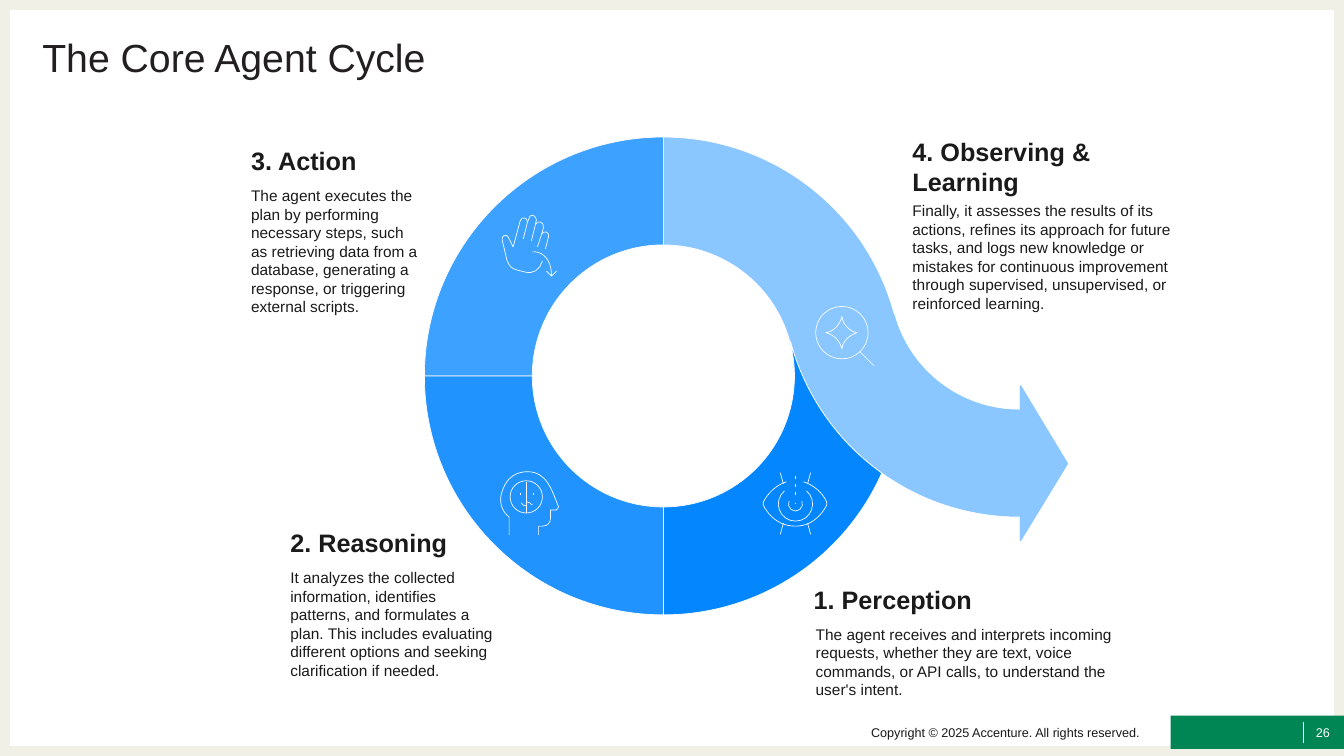
from dataclasses import dataclass
from math import ceil, cos, radians, sin, tan

from lxml import etree
from pptx import Presentation
from pptx import util as u
from pptx.dml.color import RGBColor
from pptx.enum import shapes, text
from pptx.oxml import ns

Point = tuple[float, float]
Stroke = list[list[Point]]  # one point: a line end; three points: a cubic curve

INK, WHITE = "1A1A1A", "FFFFFF"
HUB = (6.58, 3.73)      # centre of the ring
BEND = (10.11, 2.78)    # centre of the arrow's outward bend
OUT, IN = 2.37, 1.3     # ring radii
FAR, NEAR = 2.35, 1.28  # bend radii
TURN = 15               # angle at which the ring passes into the bend


@dataclass
class Step:
    head: str
    body: str
    x: float
    top: float
    shift: float
    low: float
    width: float
    high: float


@dataclass
class Band:
    fill: str
    edge: Stroke


STEPS = [
    Step("1. Perception",
         "The agent receives and interprets incoming requests, whether they are text, "
         "voice commands, or API calls, to understand the user's intent.",
         8.07, 5.8, 0.02, 6.2, 3.06, 0.74),
    Step("2. Reasoning",
         "It analyzes the collected information, identifies patterns, and formulates a plan. "
         "This includes evaluating different options and seeking clarification if needed.",
         2.88, 5.23, 0, 5.64, 2.04, 1.3),
    Step("3. Action",
         "The agent executes the plan by performing necessary steps, such as retrieving data "
         "from a database, generating a response, or triggering external scripts.",
         2.49, 1.44, 0, 1.85, 1.71, 1.3),
    Step("4. Observing &\nLearning",
         "Finally, it assesses the results of its actions, refines its approach for future "
         "tasks, and logs new knowledge or mistakes for continuous improvement through "
         "supervised, unsupervised, or reinforced learning.",
         9.05, 1.35, 0, 2.0, 2.83, 1.11),
]


# Geometry
def arc(hub: Point, r: float, start: float, end: float) -> Stroke:
    """Circle part in curves of 90 degrees at most, clockwise from the right."""
    count = ceil(abs(end - start) / 90)
    turn = radians(end - start) / count
    pull = r * 4 / 3 * tan(turn / 4)

    def at(i: int, lean: float = 0) -> Point:
        t = radians(start) + turn * i
        return (hub[0] + r * cos(t) - lean * sin(t), hub[1] + r * sin(t) + lean * cos(t))

    return [[at(0)]] + [[at(i, pull), at(i + 1, -pull), at(i + 1)] for i in range(count)]


def trace(plan: str) -> list[Stroke]:
    """Strokes split by '|'; C starts a cubic curve, other pairs are line ends."""
    strokes = []
    for part in plan.split("|"):
        marks = iter(part.split())
        stroke: Stroke = []
        for mark in marks:
            if mark == "C":
                stroke.append([(float(next(marks)), float(next(marks))) for _ in range(3)])
            else:
                stroke.append([(float(mark), float(next(marks)))])
        strokes.append(stroke)
    return strokes


# Drawing helpers
def tint(code: str) -> RGBColor:
    return RGBColor.from_string(code)


def bend(shape, strokes: list[Stroke]) -> None:
    """Join each three line ends that belong to a curve."""
    ends = iter(list(shape.element.iter(ns.qn("a:lnTo"))))
    for stroke in strokes:
        for part in stroke[1:]:
            first, *rest = [next(ends) for _ in part]
            if rest:
                first.tag = ns.qn("a:cubicBezTo")
            for node in rest:
                first.append(node[0])
                node.getparent().remove(node)


def draw(slide, strokes: list[Stroke], fill: str | None = None) -> None:
    pen = None
    for stroke in strokes:
        pts = [(u.Inches(x), u.Inches(y)) for part in stroke for x, y in part]
        if pen is None:
            pen = slide.shapes.build_freeform(*pts[0], scale=1.0)
        else:
            pen.move_to(*pts[0])
        pen.add_line_segments(pts[1:], close=fill is not None)
    shape = pen.convert_to_shape()
    bend(shape, strokes)
    shape.shadow.inherit = False
    if fill:
        shape.fill.solid()
        shape.fill.fore_color.rgb = tint(fill)
    else:
        shape.fill.background()
    shape.line.color.rgb = tint(WHITE)
    shape.line.width = u.Pt(0.48)


def block(slide, x: float, y: float, w: float, h: float, fill: str) -> None:
    shape = slide.shapes.add_shape(shapes.MSO_SHAPE.RECTANGLE, *map(u.Inches, (x, y, w, h)))
    shape.shadow.inherit = False
    shape.fill.solid()
    shape.fill.fore_color.rgb = tint(fill)
    shape.line.fill.background()


def write(box, words: str, *, size: float, color: str = INK, bold: bool = False,
          wrap: bool = True, mid: bool = False, align=text.PP_ALIGN.LEFT,
          space: float | None = None) -> None:
    frame = box.text_frame
    frame.margin_left = frame.margin_right = frame.margin_top = frame.margin_bottom = 0
    frame.auto_size = text.MSO_AUTO_SIZE.NONE
    frame.word_wrap = wrap
    frame.vertical_anchor = text.MSO_ANCHOR.MIDDLE if mid else text.MSO_ANCHOR.TOP
    para = frame.paragraphs[0]
    para.text = words
    para.alignment = align
    if space:
        para.line_spacing = space
    for run in para.runs:
        run.font.name, run.font.size, run.font.bold = "Arial", u.Pt(size), bold
        run.font.color.rgb = tint(color)


def place(slide, x: float, y: float, w: float, h: float):
    return slide.shapes.add_textbox(*map(u.Inches, (x, y, w, h)))


# Ring and icons
def bands() -> list[Band]:
    tip = trace("10.11 3.82 10.13 3.82 10.6 4.6 10.13 5.37 10.11 5.37")[0]
    arrow = (arc(HUB, OUT, -90, -TURN) + arc(BEND, NEAR, 180 - TURN, 90) + tip
             + arc(BEND, FAR, 90, 180 - TURN) + arc(HUB, IN, -TURN, -90))
    action, reason = [arc(HUB, OUT, a, a + 90) + arc(HUB, IN, a + 90, a) for a in (180, 90)]
    sense = arc(HUB, IN, -TURN, 90) + arc(HUB, OUT, 90, 24) + arc(BEND, FAR, 126, 180 - TURN)
    return [Band("8AC6FF", arrow), Band("3CA1FF", action),
            Band("2093FF", reason), Band("0486FF", sense)]


def icons() -> list[list[Stroke]]:
    hand = trace(
        "5.23 2.21 5.25 2.16 C 5.25 2.14 5.3 2.11 5.32 2.18 5.31 2.23"
        "| 5.27 2.39 5.31 2.23 C 5.33 2.18 5.4 2.2 5.39 2.26 5.37 2.33"
        "| 5.33 2.45 5.37 2.33 C 5.38 2.28 5.46 2.3 5.44 2.35 5.41 2.47"
        "| 5.19 2.37 5.23 2.21 C 5.24 2.16 5.17 2.14 5.16 2.19"
        " 5.09 2.45 5.04 2.35 C 5.02 2.32 4.97 2.34 4.98 2.38"
        " 5.03 2.59 C 5.05 2.64 5.08 2.67 5.13 2.68 5.21 2.7"
        " C 5.28 2.72 5.35 2.68 5.37 2.61 5.38 2.59"
        "| 5.52 2.69 5.47 2.74 5.42 2.69 | 5.28 2.5 C 5.34 2.49 5.47 2.53 5.47 2.74")
    lens = [arc((8.35, 3.3), 0.26, 0, 360)] + trace(
        "8.53 3.49 8.67 3.63 | 8.19 3.3 C 8.27 3.29 8.33 3.22 8.35 3.14"
        " C 8.36 3.22 8.43 3.29 8.5 3.3 C 8.43 3.32 8.36 3.38 8.35 3.46"
        " C 8.33 3.38 8.27 3.32 8.19 3.3")
    face = [arc((5.22, 4.93), 0.16, 0, 360)]
    face += [[[(x, 4.89)], [(x, 4.91)]] for x in (5.16, 5.29)]
    face += trace(
        "5.05 5.31 5.05 5.13 C 4.97 5.07 4.94 4.96 4.99 4.85"
        " C 5.03 4.74 5.12 4.68 5.23 4.68"
        " C 5.42 4.68 5.47 4.85 5.54 5.03 5.52 5.06 5.46 5.06 5.46 5.14"
        " C 5.46 5.19 5.43 5.22 5.38 5.22 5.34 5.22 5.34 5.31"
        "| 5.22 5.02 C 5.2 5.02 5.18 5.01 5.17 4.99 | 5.28 5.01 C 5.26 4.99 5.24 4.98 5.22 4.98"
        "| 5.22 5.09 5.22 4.78")
    mid = (7.89, 5.0)
    eye = [arc(mid, 0.17, -50, 230), arc(mid, 0.07, -25, 205), [[mid], [(7.89, 4.99)]]]
    eye += [[[(mid[0] + s * 0.15, a)], [(mid[0] + s * 0.12, b)]]
            for s in (-1, 1) for a, b in ((4.69, 4.8), (5.3, 5.19))]
    eye += [[[(mid[0], y)], [(mid[0], y + 0.03)]] for y in (4.72, 4.8, 4.88)]
    eye += trace("7.8 4.78 C 7.7 4.81 7.62 4.89 7.57 4.98 7.57 5.01"
                 " C 7.59 5.05 7.68 5.22 7.89 5.22 C 8.09 5.22 8.18 5.05 8.2 5.01"
                 " 8.2 4.98 C 8.16 4.89 8.07 4.81 7.97 4.78")
    return [hand, lens, face, eye]


def main() -> None:
    deck = Presentation()
    deck.slide_width, deck.slide_height = u.Inches(13.33), u.Inches(7.5)
    slide = deck.slides.add_slide(deck.slide_layouts[5])

    # Frame and footer
    block(slide, 0, 0, 13.33, 7.5, "F0F0E6")
    block(slide, 0.1, 0.1, 13.13, 7.3, WHITE)
    block(slide, 11.61, 7.1, 1.72, 0.33, "008555")
    rule = slide.shapes.add_connector(shapes.MSO_CONNECTOR.STRAIGHT,
                                      *map(u.Inches, (12.93, 7.16, 12.93, 7.37)))
    rule.line.color.rgb, rule.line.width = tint(WHITE), u.Pt(1)
    etree.SubElement(rule.element.spPr, ns.qn("a:effectLst"))
    write(place(slide, 13.03, 7.17, 0.18, 0.2), "26", size=9, color=WHITE,
          wrap=False, mid=True, align=text.PP_ALIGN.CENTER)
    write(place(slide, 8.64, 7.16, 2.86, 0.21),
          "Copyright © 2025 Accenture. All rights reserved.", size=9, color="181818", mid=True)

    # Title, brought in front of the frame
    title = slide.shapes.title
    title.left, title.top, title.width, title.height = map(u.Inches, (0.42, 0.42, 12.68, 0.35))
    write(title, "The Core Agent Cycle", size=28, color="231F20", space=0.8)
    slide.shapes.element.append(title.element)

    # Cycle
    for step in STEPS:
        write(place(slide, step.x, step.top, 1.78, 0.3), step.head, size=18, bold=True, wrap=False)
        write(place(slide, step.x + step.shift, step.low, step.width, step.high),
              step.body, size=11)
    for band in bands():
        draw(slide, [band.edge], band.fill)
    for icon in icons():
        draw(slide, icon)
    deck.save("out.pptx")


if __name__ == "__main__":
    main()
